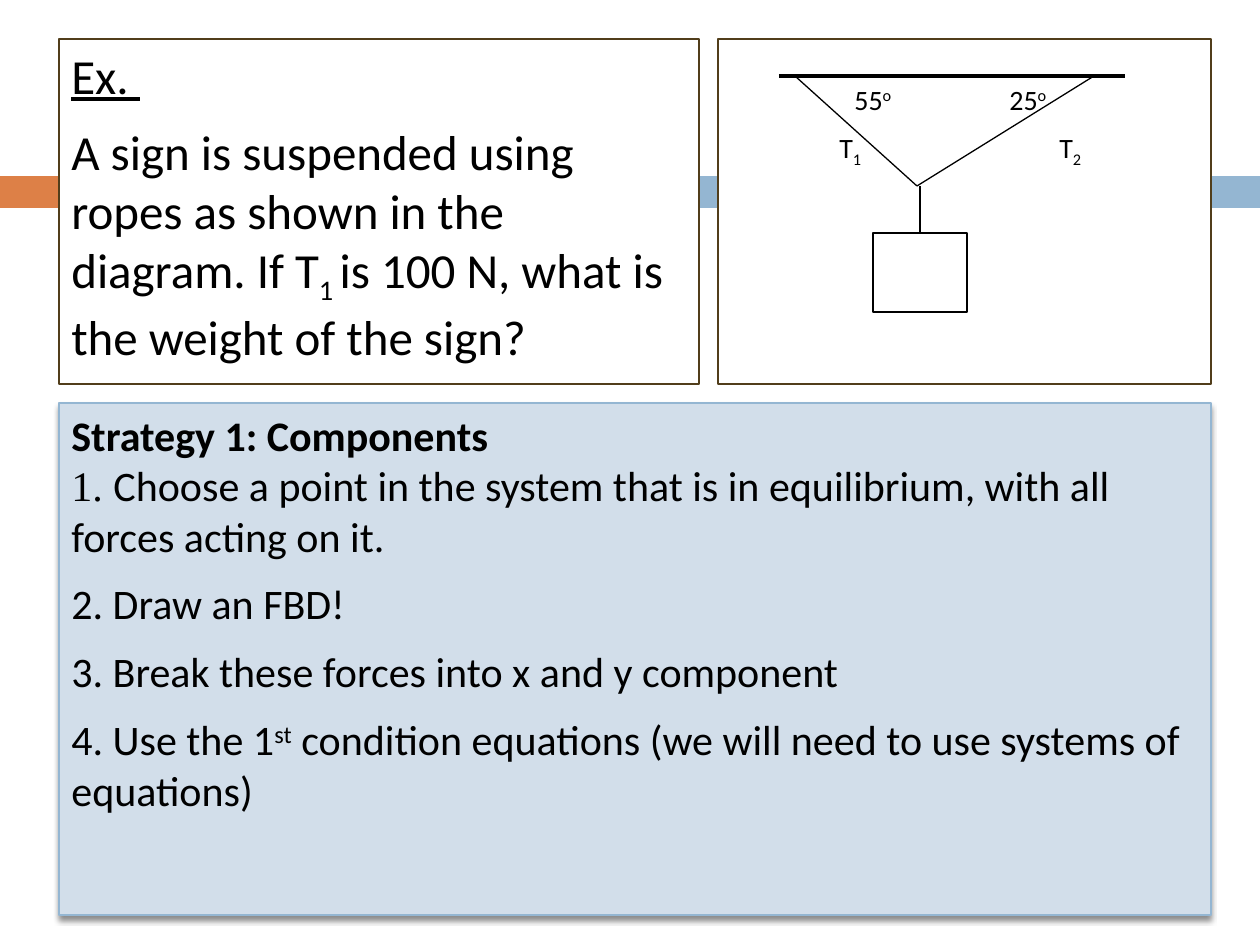
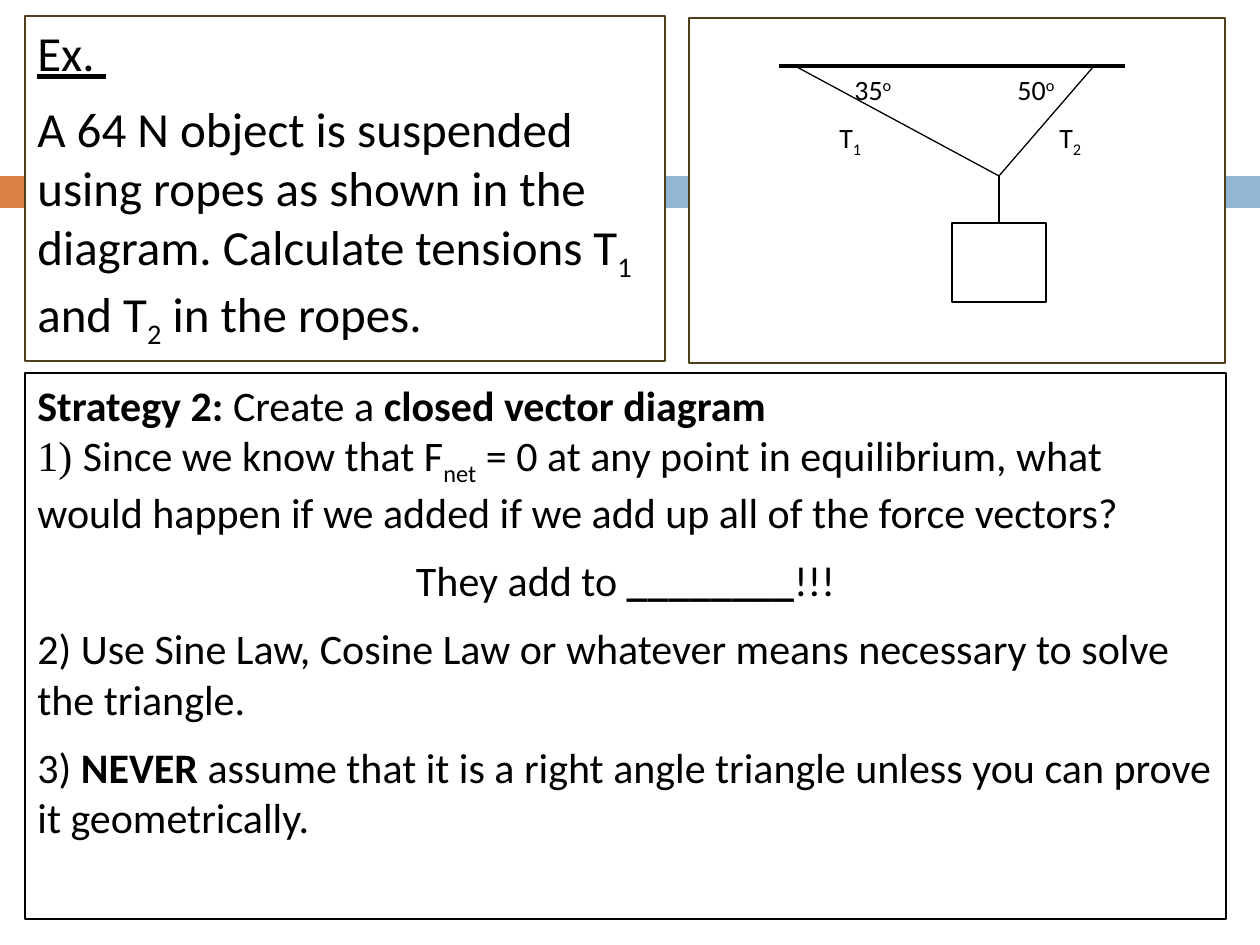
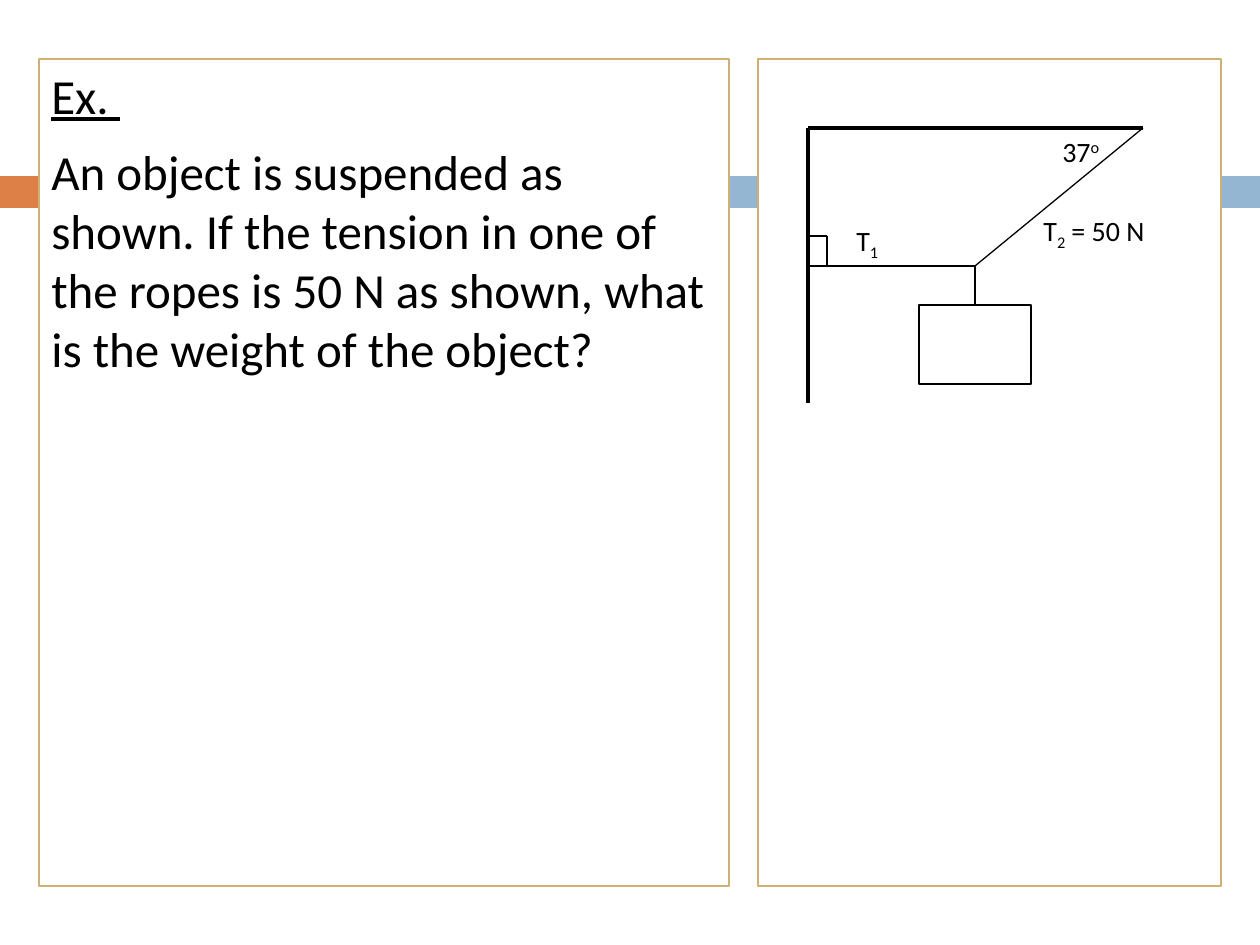
"""Build three slides of worked examples on ropes in equilibrium."""
from lxml import etree
from pptx import Presentation
from pptx import util as u
from pptx.dml.color import RGBColor
from pptx.enum import shapes, text
from pptx.oxml.ns import qn

PX = u.Inches(1) / 126
COLOURS = {
    "black": "000000",
    "white": "FFFFFF",
    "orange": "DD8047",
    "blue": "94B6D2",
    "pale blue": "D2DEEA",
    "brown": "513E1B",
    "sand": "D0AF72",
}
BASELINES = {"sub": "-25000", "super": "30000"}
EXAMPLE = [("Ex. ", "underline")]


def px(*lengths):
    """Turn pixel lengths into EMU."""
    return [u.Emu(round(length * PX)) for length in lengths]


def colour(name):
    """Look up a named colour."""
    return RGBColor.from_string(COLOURS[name])


def add_span(para, run, size):
    """Add one run, given as plain text or as text followed by styles."""
    words, *styles = (run,) if isinstance(run, str) else run
    span = para.add_run()
    span.text = words
    font = span.font
    font.size = u.Pt(size)
    font.name = "Times New Roman" if "serif" in styles else "Calibri"
    font.color.rgb = colour("black")
    font.bold = "bold" in styles
    font.underline = "underline" in styles
    for style in BASELINES.keys() & set(styles):
        span._r.get_or_add_rPr().set("baseline", BASELINES[style])


def write(box, paragraphs, size):
    """Fill a box with left-aligned paragraphs from the top down."""
    frame = box.text_frame
    frame.word_wrap = True
    frame.vertical_anchor = text.MSO_ANCHOR.TOP
    for index, runs in enumerate(paragraphs):
        para = frame.add_paragraph() if index else frame.paragraphs[0]
        para.alignment = text.PP_ALIGN.LEFT
        para.space_after = u.Pt(10)
        for run in runs:
            if run == "\n":
                para.add_line_break()
            else:
                add_span(para, run, size)


def add_box(page, area, fill, line=None, weight=1.5):
    """Add a flat rectangle."""
    box = page.shapes.add_shape(shapes.MSO_SHAPE.RECTANGLE, *px(*area))
    box.shadow.inherit = False
    box.fill.solid()
    box.fill.fore_color.rgb = colour(fill)
    if line:
        box.line.color.rgb = colour(line)
        box.line.width = u.Pt(weight)
    else:
        box.line.fill.background()
    return box


def add_card(page, area, line, paragraphs=(), size=28, fill="white", weight=1.5):
    """Add a framed box with text."""
    card = add_box(page, area, fill, line, weight)
    write(card, paragraphs, size)
    return card


def drop_shadow(box):
    """Give a box a soft shadow below it."""
    effects = box.element.spPr.find(qn("a:effectLst"))
    shadow = etree.SubElement(
        effects, qn("a:outerShdw"), blurRad=str(u.Pt(3)), dist=str(u.Pt(2.4)),
        dir="5400000", algn="ctr", rotWithShape="0")
    tint = etree.SubElement(shadow, qn("a:srgbClr"), val=COLOURS["black"])
    etree.SubElement(tint, qn("a:alpha"), val="45000")


def add_line(page, start, end, weight=0.75):
    """Add a straight black line."""
    line = page.shapes.add_connector(
        shapes.MSO_CONNECTOR.STRAIGHT, *px(*start, *end))
    line.line.color.rgb = colour("black")
    line.line.width = u.Pt(weight)
    etree.SubElement(line.element.spPr, qn("a:effectLst"))
    return line


def add_label(page, area, *runs):
    """Add a diagram label."""
    write(page.shapes.add_textbox(*px(*area)), [runs], 16)


def add_weight(page, left, top, width, rope_top):
    """Add a hanging object and the rope that holds it."""
    weight = add_box(page, (left, top, width, 79), "white", "black", 0.75)
    middle = left + width // 2
    rope = add_line(page, (middle, rope_top), (middle, top))
    rope.end_connect(weight, 0)


def add_ceiling_diagram(page, top, knot_x, weight_left, angles, right_angle_x):
    """Draw an object hung from a ceiling by two ropes."""
    knot = (knot_x, top + 110)
    add_line(page, (779, top), (1125, top), 2.25)
    for anchor in (795, 1094):
        add_line(page, (anchor, top), knot)
    add_weight(page, weight_left, top + 157, 94, knot[1])
    for left, angle in zip((842, right_angle_x), angles):
        add_label(page, (left, top, 94, 29), angle, ("o", "super"))
    for left, number in ((827, "1"), (1047, "2")):
        add_label(page, (left, top + 48, 63, 48), "T", (number, "sub"))


def add_wall_diagram(page):
    """Draw an object held by a wall rope and a ceiling rope."""
    wall, ceiling, corner = 808, 128, 1143
    knot = (975, 266)
    add_line(page, (wall, 403), (wall, ceiling), 2.5)
    add_line(page, (wall, ceiling), (corner, ceiling), 2.5)
    add_line(page, (wall, knot[1]), knot)
    add_line(page, knot, (corner, ceiling))
    add_weight(page, 919, 305, 112, knot[1])
    add_line(page, (wall, 236), (827, 236))
    add_line(page, (827, 236), (827, knot[1]))
    add_label(page, (1050, ceiling, 74, 39), "37", ("o", "super"))
    add_label(page, (844, 217, 74, 59), "T", ("1", "sub"))
    add_label(page, (1031, 207, 131, 59), "T", ("2", "sub"), " = 50 N")


def add_page(deck):
    """Add a blank page with the two bands."""
    page = deck.slides.add_slide(deck.slide_layouts[6])
    add_box(page, (0, 176, 73, 32), "orange")
    add_box(page, (82, 176, 1178, 32), "blue")
    return page


def add_components_page(deck):
    """Add the example solved by components."""
    page = add_page(deck)
    add_card(page, (718, 39, 493, 345), "brown")
    add_card(page, (59, 39, 640, 345), "brown", [
        EXAMPLE,
        ["A sign is suspended using ropes as shown in the diagram. If T",
         ("1 ", "sub"), "is 100 N, what is the weight of the sign?"],
    ])
    strategy = add_card(page, (59, 403, 1152, 512), "blue", [
        [("Strategy 1: Components", "bold"), "\n", ("1. ", "serif"),
         "Choose a point in the system that is in equilibrium, "
         "with all forces acting on it."],
        ["2. Draw an FBD!"],
        ["3. Break these forces into x and y component"],
        ["4. Use the 1", ("st", "super"),
         " condition equations (we will need to use systems of equations)"],
    ], 24, "pale blue", 0.79)
    drop_shadow(strategy)
    add_ceiling_diagram(page, 76, 917, 873, ("55", "25"), 997)


def add_vector_page(deck):
    """Add the example solved by a closed vector diagram."""
    page = add_page(deck)
    strategy = add_card(page, (25, 373, 1201, 546), "black", [
        [("Strategy 2:", "bold"), " Create a ",
         ("closed vector diagram", "bold"), "\n", ("1) ", "serif"),
         "Since we know that F", ("net", "sub"),
         " = 0 at any point in equilibrium, what would happen "
         "if we added if we add up all of the force vectors?"],
        ["They add to ", ("________", "bold"), "!!!"],
        ["2) Use Sine Law, Cosine Law or whatever means necessary "
         "to solve the triangle."],
        ["3) ", ("NEVER", "bold"),
         " assume that it is a right angle triangle unless "
         "you can prove it geometrically."],
    ], 24)
    strategy.text_frame.paragraphs[1].alignment = text.PP_ALIGN.CENTER
    add_card(page, (689, 18, 536, 345), "brown")
    add_card(page, (25, 16, 640, 345), "brown", [
        EXAMPLE,
        ["A 64 N object is suspended using ropes as shown in the diagram. "
         "Calculate tensions T", ("1", "sub"), " and T", ("2", "sub"),
         " in the ropes."],
    ])
    add_ceiling_diagram(page, 66, 999, 952, ("35", "50"), 1005)


def add_wall_page(deck):
    """Add the example with a wall rope."""
    page = add_page(deck)
    add_card(page, (758, 59, 463, 827), "sand")
    add_card(page, (39, 59, 690, 827), "sand", [
        EXAMPLE,
        ["An object is suspended as shown. If the tension in one of the ropes "
         "is 50 N as shown, what is the weight of the object?"],
    ])
    add_wall_diagram(page)


def main():
    """Build and save the deck."""
    deck = Presentation()
    deck.slide_width, deck.slide_height = px(1260, 945)
    add_components_page(deck)
    add_vector_page(deck)
    add_wall_page(deck)
    deck.save("out.pptx")


if __name__ == "__main__":
    main()
